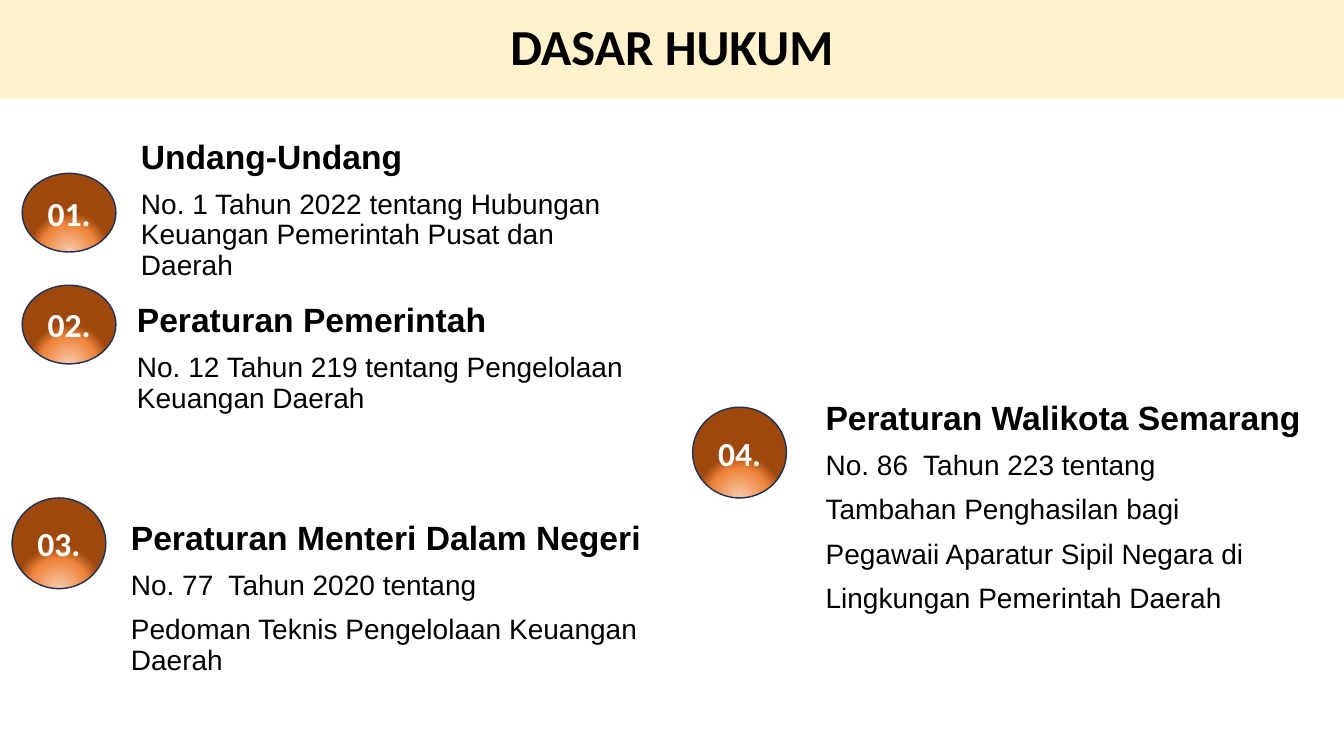
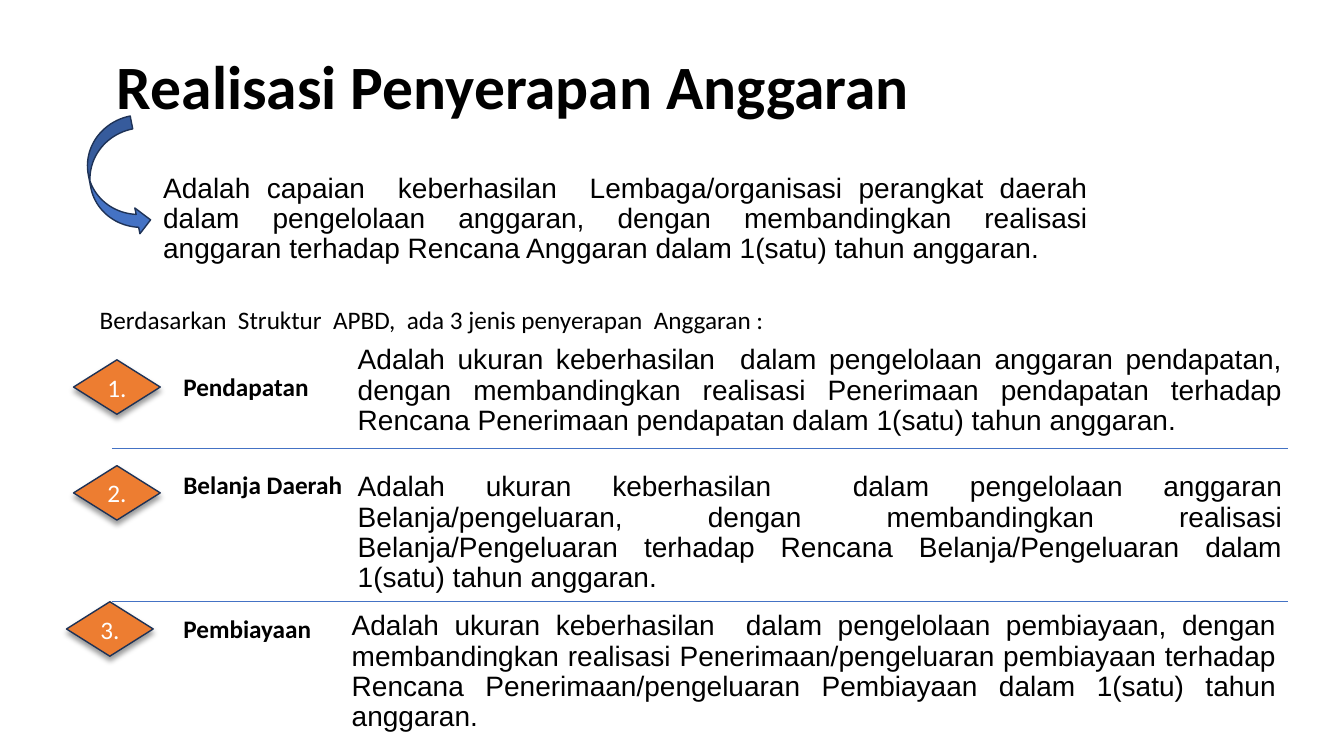
"""Builds two slides on the legal basis and the realisation of a regional budget."""
from lxml import etree
from pptx import Presentation
from pptx.dml.color import RGBColor
from pptx.enum.shapes import MSO_CONNECTOR as Connector, MSO_SHAPE as Preset
from pptx.enum.text import MSO_ANCHOR as Anchor, MSO_AUTO_SIZE as AutoSize, PP_ALIGN as Align
from pptx.oxml import parse_xml
from pptx.oxml.ns import nsdecls, qn
from pptx.util import Inches, Pt

COLORS = {
    "text": "000000",
    "white": "FFFFFF",
    "band": "FFF2CC",
    "outline": "1E3256",
    "blue": "4472C4",
    "orange": "ED7D31",
}
BADGE_STOPS = [(0, "F8CBAD"), (46, "EE843B"), (66, "9E480E")]
HEADING_FONT = "Calibri"
BODY_FONT = "Arial"
TITLE_ONLY = 5

LEGAL_ENTRIES = [
    ("01.", (0.22, 1.34, 5.88, 1.62), (0.38, 0.78), 1.08,
     ["Undang-Undang",
      "No. 1 Tahun 2022 tentang Hubungan Keuangan Pemerintah Pusat dan Daerah"]),
    ("02.", (0.22, 2.96, 6.71, 1.45), (-0.13, 0.78), 1.04,
     ["Peraturan Pemerintah",
      "No. 12 Tahun 219 tentang Pengelolaan Keuangan Daerah"]),
    ("03.", (0.12, 5.12, 6.75, 1.45), (-0.18, 0.9), 1.08,
     ["Peraturan Menteri Dalam Negeri",
      "No. 77  Tahun 2020 tentang",
      "Pedoman Teknis Pengelolaan Keuangan Daerah"]),
    ("04.", (6.87, 3.93, 6.89, 1.45), (0.11, 0.9), 1.22,
     ["Peraturan Walikota Semarang",
      "No. 86  Tahun 223 tentang",
      "Tambahan Penghasilan bagi",
      "Pegawaii Aparatur Sipil Negara di",
      "Lingkungan Pemerintah Daerah"]),
]

DEFINITION = ("Adalah capaian  keberhasilan  Lembaga/organisasi perangkat daerah dalam "
              "pengelolaan anggaran, dengan membandingkan realisasi anggaran terhadap "
              "Rencana Anggaran dalam 1(satu) tahun anggaran.")
INTRODUCTION = "Berdasarkan  Struktur  APBD,  ada 3 jenis penyerapan  Anggaran :"

BUDGET_ROWS = [
    ("1.", "Pendapatan", (0.73, 3.38, 12.09, 1.05), 0.19, (0.99, 0.25, 1.46),
     "Adalah ukuran keberhasilan  dalam pengelolaan anggaran pendapatan, dengan "
     "membandingkan realisasi Penerimaan pendapatan terhadap Rencana Penerimaan "
     "pendapatan dalam 1(satu) tahun anggaran."),
    ("2.", "Belanja Daerah", (0.73, 4.64, 12.09, 1.05), -0.02, (0.99, -0.03, 1.91),
     "Adalah ukuran keberhasilan  dalam pengelolaan anggaran Belanja/pengeluaran, "
     "dengan membandingkan realisasi Belanja/Pengeluaran terhadap Rencana "
     "Belanja/Pengeluaran dalam 1(satu) tahun anggaran."),
    ("3.", "Pembiayaan", (0.66, 6.02, 12.1, 1.05), -0.05, (1.06, 0.02, 1.48),
     "Adalah ukuran keberhasilan  dalam pengelolaan pembiayaan, dengan membandingkan "
     "realisasi Penerimaan/pengeluaran pembiayaan terhadap Rencana "
     "Penerimaan/pengeluaran Pembiayaan dalam 1(satu) tahun anggaran."),
]


def color(name):
    """Return the named colour."""
    return RGBColor.from_string(COLORS[name])


def inches(box):
    """Turn a box of numbers into lengths."""
    return [Inches(value) for value in box]


def add_run(paragraph, text, size, font=HEADING_FONT, bold=False, ink="text"):
    """Add one formatted run to a paragraph."""
    run = paragraph.add_run()
    run.text = text
    run.font.name = font
    run.font.size = Pt(size)
    run.font.bold = bold
    run.font.color.rgb = color(ink)


def add_title(slide, box, text, size, align=Align.LEFT, band=None):
    """Place the title, on a coloured band if one is named."""
    title = slide.shapes.title
    title.left, title.top, title.width, title.height = inches(box)
    if band:
        title.fill.solid()
        title.fill.fore_color.rgb = color(band)
    frame = title.text_frame
    frame.auto_size = AutoSize.NONE
    frame.word_wrap = True
    frame.vertical_anchor = Anchor.MIDDLE
    paragraph = frame.paragraphs[0]
    paragraph.alignment = align
    paragraph.line_spacing = 0.9
    add_run(paragraph, text, size, bold=True)


def add_body(slide, box, texts, align=Align.LEFT, heading=False):
    """Add body paragraphs, the first one optionally as a heading."""
    frame = slide.shapes.add_textbox(*inches(box)).text_frame
    frame.word_wrap = True
    for index, text in enumerate(texts):
        paragraph = frame.add_paragraph() if index else frame.paragraphs[0]
        paragraph.alignment = align
        paragraph.line_spacing = 0.9
        paragraph.space_before = Pt(10)
        leads = heading and index == 0
        add_run(paragraph, text, 24 if leads else 20, BODY_FONT, leads)


def add_label(slide, box, text, bold=False):
    """Add a single-line label that does not wrap."""
    frame = slide.shapes.add_textbox(*inches(box)).text_frame
    frame.word_wrap = False
    frame.auto_size = AutoSize.SHAPE_TO_FIT_TEXT
    add_run(frame.paragraphs[0], text, 18, bold=bold)


def add_outlined(slide, preset, box, fill):
    """Add a filled preset shape with the dark outline."""
    shape = slide.shapes.add_shape(preset, *inches(box))
    shape.shadow.inherit = False
    shape.fill.solid()
    shape.fill.fore_color.rgb = color(fill)
    shape.line.color.rgb = color("outline")
    shape.line.width = Pt(1)
    return shape


def add_number(slide, preset, box, text, size, bold=False):
    """Add an orange shape that carries a number."""
    shape = add_outlined(slide, preset, box, "orange")
    frame = shape.text_frame
    frame.word_wrap = True
    frame.vertical_anchor = Anchor.MIDDLE
    paragraph = frame.paragraphs[0]
    paragraph.alignment = Align.CENTER
    add_run(paragraph, text, size, bold=bold, ink="white")
    return shape


def apply_glow_gradient(shape):
    """Replace the solid fill with a circular gradient lit from below."""
    stops = "".join(
        f'<a:gs pos="{position * 1000}"><a:srgbClr val="{value}"/></a:gs>'
        for position, value in BADGE_STOPS)
    gradient = parse_xml(
        f'<a:gradFill {nsdecls("a")} rotWithShape="1"><a:gsLst>{stops}</a:gsLst>'
        '<a:path path="circle"><a:fillToRect l="50000" t="130000" r="50000" b="-30000"/>'
        '</a:path></a:gradFill>')
    properties = shape.element.spPr
    properties.replace(properties.find(qn("a:solidFill")), gradient)


def apply_soft_shadow(shape):
    """Put a soft shadow below the shape."""
    effects = shape.element.spPr.find(qn("a:effectLst"))
    effects.append(parse_xml(
        f'<a:outerShdw {nsdecls("a")} blurRad="{Pt(4)}" dist="{Pt(3)}" dir="5400000" '
        'algn="ctr" rotWithShape="0"><a:srgbClr val="000000"><a:alpha val="40000"/>'
        '</a:srgbClr></a:outerShdw>'))


def add_divider(slide, top):
    """Draw a thin line between two budget rows."""
    line = slide.shapes.add_connector(Connector.STRAIGHT, *inches((1.11, top, 12.77, top)))
    line.line.color.rgb = color("blue")
    line.line.width = Pt(0.5)
    etree.SubElement(line.element.spPr, qn("a:effectLst"))


def add_legal_entry(slide, number, box, badge, text_offset, texts):
    """Place a numbered badge and its regulation in the box."""
    left, top, width, height = box
    badge_offset, badge_height = badge
    shape = add_number(slide, Preset.OVAL, (left, top + badge_offset, 0.93, badge_height),
                       number, 24, bold=True)
    apply_glow_gradient(shape)
    add_body(slide, (left + text_offset, top, width - text_offset, height), texts, heading=True)


def add_budget_row(slide, number, name, box, diamond_offset, label, text):
    """Place a numbered diamond, a label and an explanation in the box."""
    left, top, width, height = box
    label_left, label_top, label_width = label
    text_width = 9.37
    shape = add_number(slide, Preset.DIAMOND, (left, top + diamond_offset, 0.86, 0.54),
                       number, 18)
    apply_soft_shadow(shape)
    add_label(slide, (left + label_left, top + label_top, label_width, 0.4), name, bold=True)
    add_body(slide, (left + width - text_width, top, text_width, height), [text], Align.JUSTIFY)


def add_definition(slide, box):
    """Place the curved arrow and the definition in the box."""
    left, top, width, height = box
    arrow = add_outlined(slide, Preset.CURVED_RIGHT_ARROW, (left, top, 0.52, 1.18), "blue")
    arrow.rotation = 348.9
    add_body(slide, (left + 0.63, top + 0.49, width - 0.63, height - 0.49),
             [DEFINITION], Align.JUSTIFY)


def build_legal_slide(presentation):
    """Build the slide with the legal basis."""
    slide = presentation.slides.add_slide(presentation.slide_layouts[TITLE_ONLY])
    add_title(slide, (0, 0, 13.33, 0.98), "DASAR HUKUM", 36, Align.CENTER, "band")
    for entry in LEGAL_ENTRIES:
        add_legal_entry(slide, *entry)


def build_budget_slide(presentation):
    """Build the slide with the kinds of budget realisation."""
    slide = presentation.slides.add_slide(presentation.slide_layouts[TITLE_ONLY])
    add_title(slide, (1.06, 0.36, 11.5, 1.05), "Realisasi Penyerapan Anggaran", 44)
    add_definition(slide, (0.89, 1.19, 10, 1.54))
    add_label(slide, (0.89, 2.97, 6.87, 0.4), INTRODUCTION)
    for top in (4.45, 5.97):
        add_divider(slide, top)
    for row in BUDGET_ROWS:
        add_budget_row(slide, *row)


def main():
    """Build and save the presentation."""
    presentation = Presentation()
    presentation.slide_width = Inches(13.33)
    presentation.slide_height = Inches(7.5)
    build_legal_slide(presentation)
    build_budget_slide(presentation)
    presentation.save("out.pptx")


if __name__ == "__main__":
    main()
